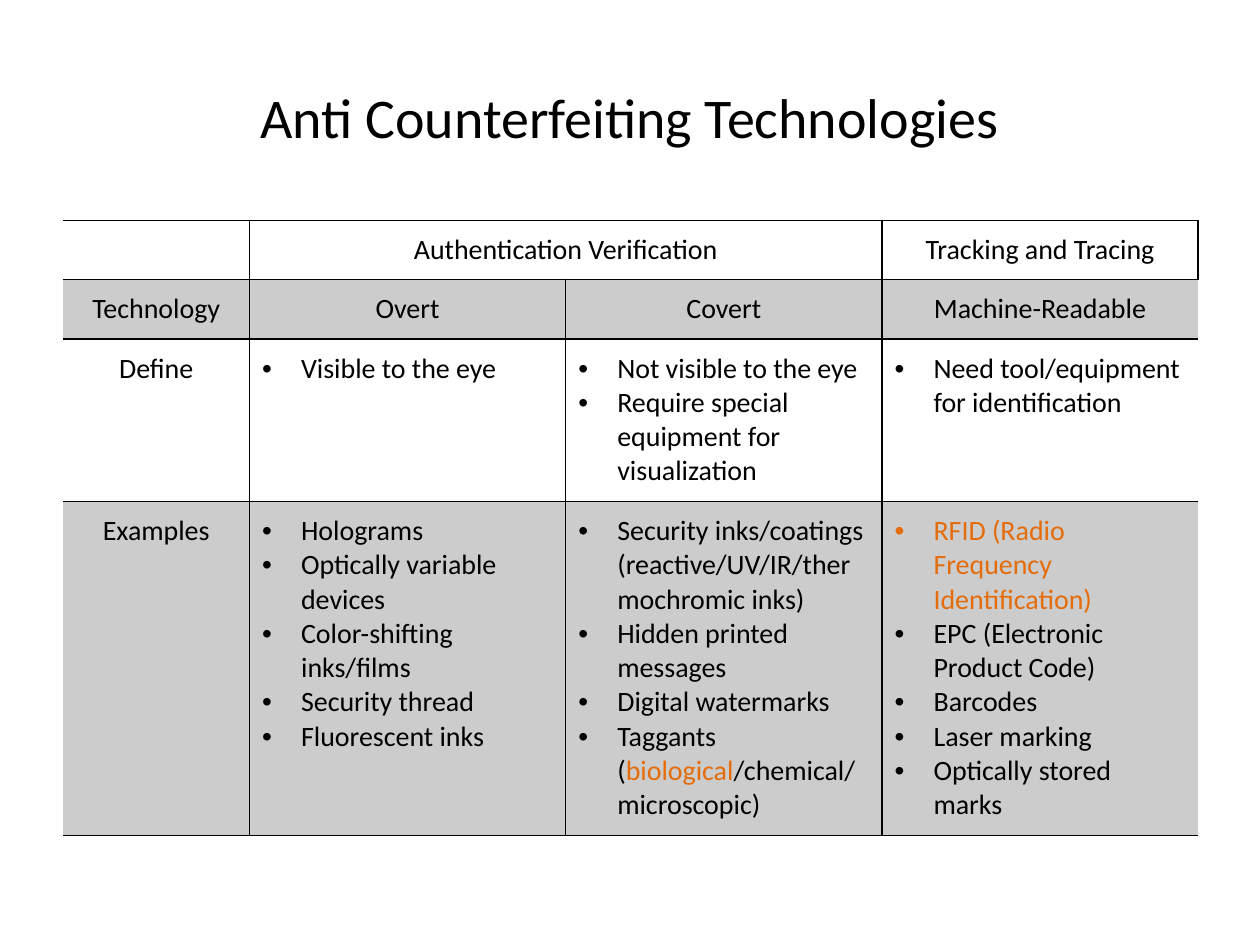
"""Build a slide with a table of anti-counterfeiting technologies."""
from lxml import etree
from pptx import Presentation
from pptx.dml.color import RGBColor
from pptx.enum.text import MSO_ANCHOR, PP_ALIGN
from pptx.oxml.ns import qn
from pptx.util import Inches, Pt

CENTER, LEFT = PP_ALIGN.CENTER, PP_ALIGN.LEFT
MIDDLE, TOP = MSO_ANCHOR.MIDDLE, MSO_ANCHOR.TOP
BLACK = RGBColor(0x00, 0x00, 0x00)
ORANGE = RGBColor(0xE4, 0x6C, 0x0A)
FONT = "Calibri"
PLAIN_TABLE_STYLE = "{2D5ABB26-0587-4C30-8999-92F81FD0307C}"

SLIDE_WIDTH, SLIDE_HEIGHT = Inches(10), Inches(7.5)
MARGIN = SLIDE_WIDTH * 0.05
CONTENT_WIDTH = SLIDE_WIDTH * 0.9
COLUMN_WIDTHS = (1.48, 2.51, 2.51, 2.51)
ROW_HEIGHTS = (0.47, 0.47, 1.29, 2.65)
RULED_COLUMNS = (1, 3)
SHADED_ROWS = (1, 3)
FIRST_BULLET_ROW = 2
PADDING = Inches(0.1)
BULLET_INDENT = Inches(0.31)

TECHNOLOGIES = [
    [[], ["Authentication Verification"], [], ["Tracking and Tracing"]],
    [["Technology"], ["Overt"], ["Covert"], ["Machine-Readable"]],
    [
        ["Define"],
        ["Visible to the eye"],
        ["Not visible to the eye", "Require special equipment for visualization"],
        ["Need tool/equipment for identification"],
    ],
    [
        ["Examples"],
        ["Holograms", "Optically variable devices", "Color-shifting inks/films",
         "Security thread", "Fluorescent inks"],
        ["Security inks/coatings (reactive/UV/IR/thermochromic inks)",
         "Hidden printed messages", "Digital watermarks",
         [("Taggants (", BLACK), ("biological", ORANGE),
          ("/chemical/microscopic)", BLACK)]],
        [[("RFID (Radio Frequency Identification)", ORANGE)],
         "EPC (Electronic Product Code)", "Barcodes", "Laser marking",
         "Optically stored marks"],
    ],
]


def add_bullet(paragraph):
    """Give a paragraph a hanging round bullet."""
    properties = paragraph._p.get_or_add_pPr()
    properties.set("marL", str(BULLET_INDENT))
    properties.set("indent", str(-BULLET_INDENT))
    etree.SubElement(properties, qn("a:buFont"), typeface="Arial")
    etree.SubElement(properties, qn("a:buChar"), char="•")


def write_text(frame, paragraphs, *, size=16, align=CENTER, bullets=False):
    """Fill a text frame with paragraphs of plain or coloured runs."""
    for index, content in enumerate(paragraphs):
        paragraph = frame.add_paragraph() if index else frame.paragraphs[0]
        paragraph.alignment = align
        if bullets:
            add_bullet(paragraph)
        runs = [(content, BLACK)] if isinstance(content, str) else content
        for text, color in runs:
            run = paragraph.add_run()
            run.text = text
            run.font.name = FONT
            run.font.size = Pt(size)
            run.font.color.rgb = color


def add_border(cell, side):
    """Draw a thin black border on one side (L, R, T or B) of a cell."""
    line = etree.SubElement(cell._tc.get_or_add_tcPr(), qn(f"a:ln{side}"),
                            w=str(Pt(1)))
    fill = etree.SubElement(line, qn("a:solidFill"))
    etree.SubElement(fill, qn("a:srgbClr"), val=str(BLACK))


def shade(cell):
    """Fill a cell with black at 20 percent opacity."""
    cell.fill.solid()
    cell.fill.fore_color.rgb = BLACK
    color = cell._tc.tcPr.find(f"{qn('a:solidFill')}/{qn('a:srgbClr')}")
    etree.SubElement(color, qn("a:alpha"), val="20000")


def format_cell(cell, row, column):
    """Set the borders and fill that follow from a cell's grid position."""
    if column in RULED_COLUMNS:
        add_border(cell, "L")
    if column + 1 in RULED_COLUMNS:
        add_border(cell, "R")
    add_border(cell, "T")
    add_border(cell, "B")
    if row in SHADED_ROWS:
        shade(cell)
    else:
        cell.fill.background()


def fill_cell(cell, paragraphs, row, column):
    """Write a cell's text with padding, anchor and bullets by position."""
    cell.margin_left = cell.margin_right = PADDING
    cell.margin_top = cell.margin_bottom = PADDING
    cell.vertical_anchor = TOP if row else MIDDLE
    bulleted = row >= FIRST_BULLET_ROW and column > 0
    write_text(cell.text_frame, paragraphs, bullets=bulleted,
               align=LEFT if bulleted else CENTER)


def add_title(slide, title):
    """Add the centred slide title."""
    box = slide.shapes.add_textbox(MARGIN, SLIDE_HEIGHT * 0.04, CONTENT_WIDTH,
                                   Inches(1.25))
    box.text_frame.word_wrap = True
    box.text_frame.vertical_anchor = MIDDLE
    write_text(box.text_frame, [title], size=32)


def add_technology_table(slide):
    """Add the table comparing the technologies."""
    frame = slide.shapes.add_table(
        len(ROW_HEIGHTS), len(COLUMN_WIDTHS), MARGIN, Inches(1.75),
        CONTENT_WIDTH, Inches(sum(ROW_HEIGHTS)))
    table = frame.table
    table.first_row = table.horz_banding = False
    table._tbl.tblPr.find(qn("a:tableStyleId")).text = PLAIN_TABLE_STYLE
    for column, width in zip(table.columns, COLUMN_WIDTHS):
        column.width = Inches(width)
    for row, height in zip(table.rows, ROW_HEIGHTS):
        row.height = Inches(height)
    table.cell(0, 1).merge(table.cell(0, 2))
    for row, contents in enumerate(TECHNOLOGIES):
        for column, paragraphs in enumerate(contents):
            cell = table.cell(row, column)
            format_cell(cell, row, column)
            if paragraphs:
                fill_cell(cell, paragraphs, row, column)


def main():
    """Create and save the presentation."""
    presentation = Presentation()
    presentation.slide_width = SLIDE_WIDTH
    presentation.slide_height = SLIDE_HEIGHT
    slide = presentation.slides.add_slide(presentation.slide_layouts[6])
    add_title(slide, "Anti Counterfeiting Technologies")
    add_technology_table(slide)
    presentation.save("out.pptx")


if __name__ == "__main__":
    main()
